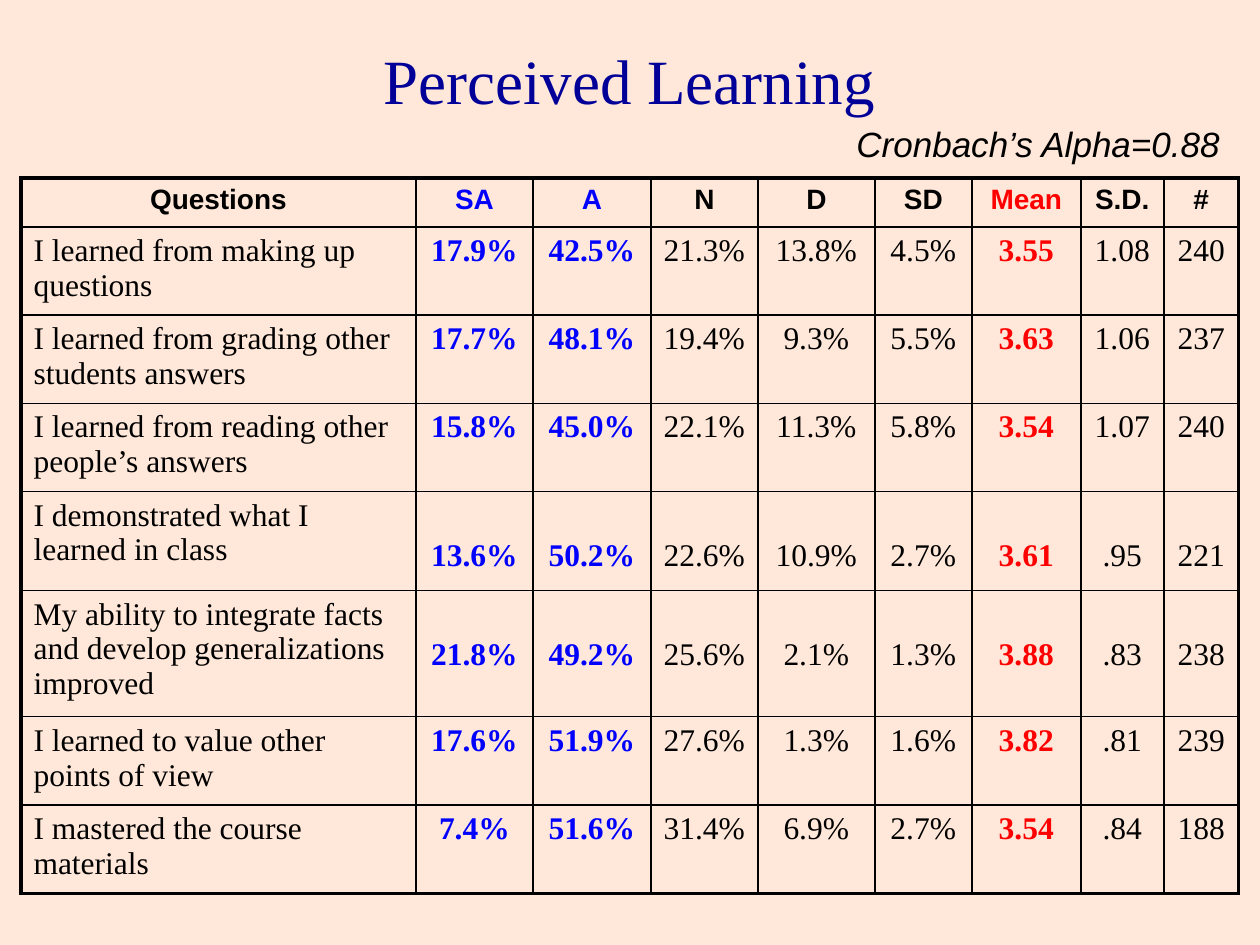
from dataclasses import dataclass

from lxml import etree
from pptx import Presentation
from pptx import util as u
from pptx.dml.color import RGBColor
from pptx.enum import text
from pptx.oxml import ns

EMU_PER_PX = 914400 / 126
COLUMN_WIDTHS = [395, 117, 118, 107, 117, 97, 109, 83, 75]
ROW_HEIGHTS = [49, 82, 83, 82, 99, 118, 82, 83]
LOWERED_ROWS = (4, 5)
ROWS = [
    ["Questions", "SA", "A", "N", "D", "SD", "Mean", "S.D.", "#"],
    ["I learned from making up questions",
     "17.9%", "42.5%", "21.3%", "13.8%", "4.5%", "3.55", "1.08", "240"],
    ["I learned from grading other students answers",
     "17.7%", "48.1%", "19.4%", "9.3%", "5.5%", "3.63", "1.06", "237"],
    ["I learned from reading other people’s answers",
     "15.8%", "45.0%", "22.1%", "11.3%", "5.8%", "3.54", "1.07", "240"],
    ["I demonstrated what I learned in class",
     "13.6%", "50.2%", "22.6%", "10.9%", "2.7%", "3.61", ".95", "221"],
    ["My ability to integrate facts and develop generalizations improved",
     "21.8%", "49.2%", "25.6%", "2.1%", "1.3%", "3.88", ".83", "238"],
    ["I learned to value other points of view",
     "17.6%", "51.9%", "27.6%", "1.3%", "1.6%", "3.82", ".81", "239"],
    ["I mastered the course materials",
     "7.4%", "51.6%", "31.4%", "6.9%", "2.7%", "3.54", ".84", "188"],
]


@dataclass(frozen=True)
class Theme:
    background: str = "FFE8D9"
    title: str = "000099"
    ink: str = "000000"
    agreement: str = "0000FF"
    mean: str = "FF0000"
    serif: str = "Times New Roman"
    sans: str = "Arial"
    title_size: int = 36
    note_size: int = 20
    header_size: int = 16
    body_size: int = 18
    outer_line: float = 2.25
    inner_line: float = 1


THEME = Theme()


def px(n):
    return u.Emu(round(n * EMU_PER_PX))


def style_text(p, font, size, color, bold=False, italic=False, align=text.PP_ALIGN.LEFT):
    p.alignment = align
    for r in p.runs:
        r.font.name = font
        r.font.size = u.Pt(size)
        r.font.bold = bold
        r.font.italic = italic
        r.font.color.rgb = RGBColor.from_string(color)


def add_text(s, box, content, wrap=True, anchor=text.MSO_ANCHOR.TOP, **style):
    tf = s.shapes.add_textbox(*map(px, box)).text_frame
    tf.word_wrap = wrap
    tf.vertical_anchor = anchor
    tf.text = content
    style_text(tf.paragraphs[0], **style)


def set_borders(cell, outer_sides):
    tc_pr = cell._tc.get_or_add_tcPr()
    for side in "LRTB":
        width = THEME.outer_line if side in outer_sides else THEME.inner_line
        ln = etree.SubElement(tc_pr, ns.qn(f"a:ln{side}"), w=str(u.Pt(width)))
        fill = etree.SubElement(ln, ns.qn("a:solidFill"))
        etree.SubElement(fill, ns.qn("a:srgbClr"), val=THEME.ink)


def format_cell(cell, row, col):
    edges = {"L": col == 0, "R": col == len(COLUMN_WIDTHS) - 1,
             "T": row == 0, "B": row == len(ROWS) - 1}
    set_borders(cell, [side for side, is_outer in edges.items() if is_outer])
    cell.fill.background()
    if col and row in LOWERED_ROWS:
        cell.margin_top = px(47)
    header = row == 0
    question = col == 0 and not header
    color = {1: THEME.agreement, 2: THEME.agreement, 6: THEME.mean}.get(col, THEME.ink)
    style_text(cell.text_frame.paragraphs[0],
               font=THEME.sans if header else THEME.serif,
               size=THEME.header_size if header else THEME.body_size,
               color=color, bold=header or color != THEME.ink,
               align=text.PP_ALIGN.LEFT if question else text.PP_ALIGN.CENTER)


def add_survey_table(s, left, top):
    table = s.shapes.add_table(len(ROWS), len(COLUMN_WIDTHS), px(left), px(top),
                               px(sum(COLUMN_WIDTHS)), px(sum(ROW_HEIGHTS))).table
    table.first_row = False
    table.horz_banding = False
    for column, width in zip(table.columns, COLUMN_WIDTHS):
        column.width = px(width)
    for table_row, height in zip(table.rows, ROW_HEIGHTS):
        table_row.height = px(height)
    for row, values in enumerate(ROWS):
        for col, value in enumerate(values):
            cell = table.cell(row, col)
            cell.text_frame.text = value
            format_cell(cell, row, col)


def main():
    prs = Presentation()
    prs.slide_width, prs.slide_height = px(1260), px(945)
    s = prs.slides.add_slide(prs.slide_layouts[6])
    s.background.fill.solid()
    s.background.fill.fore_color.rgb = RGBColor.from_string(THEME.background)
    add_text(s, (94, 0, 1071, 158), "Perceived Learning",
             anchor=text.MSO_ANCHOR.MIDDLE, font=THEME.serif, size=THEME.title_size,
             color=THEME.title, align=text.PP_ALIGN.CENTER)
    add_survey_table(s, 21, 178)
    add_text(s, (844, 116, 401, 55), "Cronbach’s Alpha=0.88", wrap=False,
             font=THEME.sans, size=THEME.note_size, color=THEME.ink, italic=True)
    prs.save("out.pptx")


if __name__ == "__main__":
    main()
